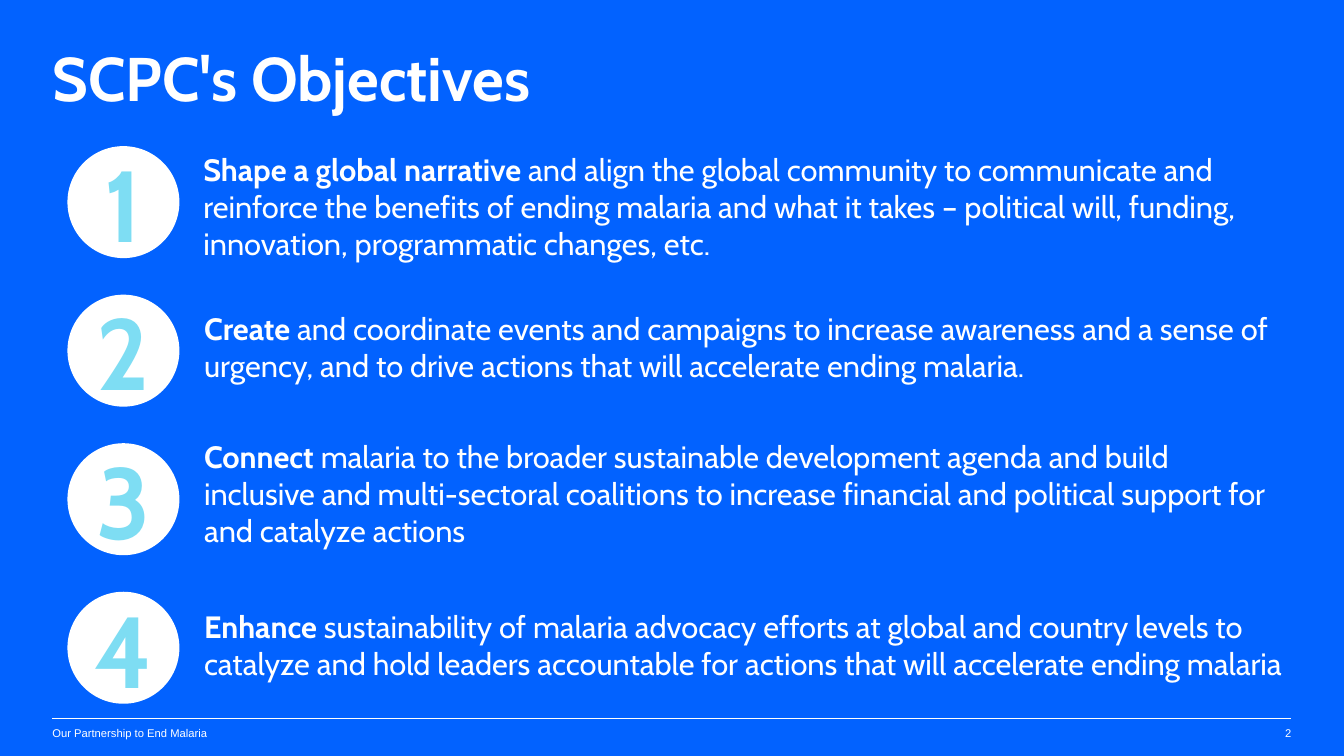
from pptx import Presentation
from pptx.dml.color import RGBColor
from pptx.enum.shapes import MSO_CONNECTOR, MSO_SHAPE
from pptx.enum.text import MSO_ANCHOR, MSO_AUTO_SIZE, PP_ALIGN
from pptx.oxml.ns import qn
from pptx.util import Pt
from lxml import etree

STRAIGHT = MSO_CONNECTOR.STRAIGHT
ELLIPSE = MSO_SHAPE.OVAL
TOP, MIDDLE = MSO_ANCHOR.TOP, MSO_ANCHOR.MIDDLE
GROW = MSO_AUTO_SIZE.SHAPE_TO_FIT_TEXT
LEFT, CENTER, RIGHT = PP_ALIGN.LEFT, PP_ALIGN.CENTER, PP_ALIGN.RIGHT

BLUE, WHITE, AQUA = "0262FF", "FFFFFF", "7EDDF3"
MARGIN, CONTENT_WIDTH = 37.4, 885
CIRCLE_TOP, CIRCLE_STEP, CIRCLE_SIZE = 104.4, 106.1, 80

FOOTER = {"name": "Arial", "size": Pt(8)}
TITLE = {"name": "Cabin", "size": Pt(44), "bold": True}
LEAD = {"name": "Cabin", "size": Pt(22), "bold": True}
BODY = {**LEAD, "bold": False}
NUMBER = {"name": "Cabin", "size": Pt(72), "bold": True}

OBJECTIVES = [
    (138.2, 104.4, 87.3, "Shape a global narrative",
     " and align the global community to communicate and reinforce the benefits of ending malaria "
     "and what it takes – political will, funding, innovation, programmatic changes, etc."),
    (138.7, 217.4, 60.5, "Create",
     " and coordinate events and campaigns to increase awareness and a sense of urgency, "
     "and to drive actions that will accelerate ending malaria."),
    (138.7, 308.9, 87.3, "Connect",
     " malaria to the broader sustainable development agenda and build inclusive and multi-sectoral "
     "coalitions to increase financial and political support for and catalyze actions"),
    (138.7, 430.6, 87.3, "Enhance",
     " sustainability of malaria advocacy efforts at global and country levels to catalyze and hold "
     "leaders accountable for actions that will accelerate ending malaria"),
]


def color(value):
    return RGBColor.from_string(value)


def add_span(para, text, font_values, font_color=WHITE):
    span = para.add_run()
    span.text = text
    for name, value in font_values.items():
        setattr(span.font, name, value)
    span.font.color.rgb = color(font_color)


def add_text(page, place, spans, frame_values, align=LEFT):
    box = page.shapes.add_textbox(*map(Pt, place))
    for name, value in {"word_wrap": True, **frame_values}.items():
        setattr(box.text_frame, name, value)
    para = box.text_frame.paragraphs[0]
    para.alignment = align
    for text, font_values in spans:
        add_span(para, text, font_values)
    return para


def add_number(page, number, top):
    circle = page.shapes.add_shape(
        ELLIPSE, Pt(48.2), Pt(top), Pt(CIRCLE_SIZE), Pt(CIRCLE_SIZE))
    circle.shadow.inherit = False
    circle.fill.solid()
    circle.fill.fore_color.rgb = color(WHITE)
    circle.line.fill.background()
    circle.text_frame.vertical_anchor = MIDDLE
    para = circle.text_frame.paragraphs[0]
    para.alignment = CENTER
    add_span(para, str(number), NUMBER, AQUA)


def add_rule(page, top):
    rule = page.shapes.add_connector(
        STRAIGHT, Pt(MARGIN), Pt(top), Pt(MARGIN + CONTENT_WIDTH), Pt(top))
    rule.line.color.rgb = color(WHITE)
    rule.line.width = Pt(0.25)
    etree.SubElement(rule.element.spPr, qn("a:effectLst"))


def main():
    deck = Presentation()
    deck.slide_width, deck.slide_height = Pt(960), Pt(540)
    page = deck.slides.add_slide(deck.slide_layouts[6])
    page.background.fill.solid()
    page.background.fill.fore_color.rgb = color(BLUE)

    flush = {"margin_left": 0, "margin_right": 0}
    footer_frame = {**flush, "margin_top": 0, "margin_bottom": 0, "vertical_anchor": MIDDLE}
    add_rule(page, 513.2)
    add_text(page, (MARGIN, 518.4, 160.6, 10.8),
             [("Our Partnership to End Malaria", FOOTER)], footer_frame)
    add_text(page, (887.8, 518.4, 34.6, 10.8), [("2", FOOTER)], footer_frame, RIGHT)
    title = add_text(page, (MARGIN, 28.8, CONTENT_WIDTH, 70.6),
                     [("SCPC's Objectives", TITLE)], {**flush, "vertical_anchor": TOP})
    title.line_spacing = Pt(49)

    for index, (left, top, height, lead, body) in enumerate(OBJECTIVES):
        add_text(page, (left, top, 784.4, height),
                 [(lead, LEAD), (body, BODY)], {"auto_size": GROW})
        add_number(page, index + 1, CIRCLE_TOP + index * CIRCLE_STEP)

    deck.save("out.pptx")


if __name__ == "__main__":
    main()
